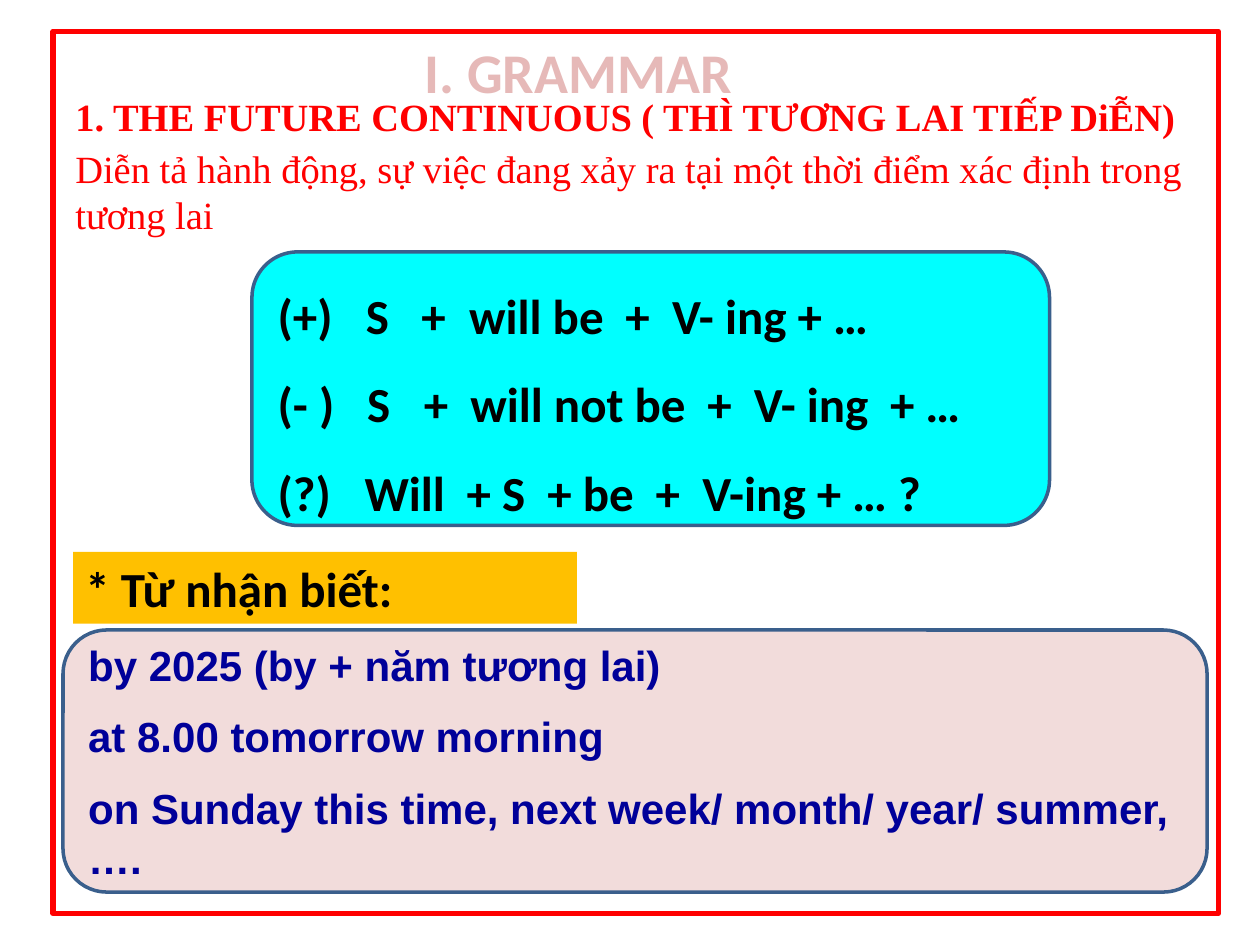
from lxml.etree import SubElement as Sub
from pptx import Presentation as Deck
from pptx.dml.color import RGBColor as Rgb
from pptx.enum.shapes import MSO_SHAPE as Kind
from pptx.enum.text import MSO_ANCHOR as Anchor, MSO_AUTO_SIZE as Fit, PP_ALIGN as Align
from pptx.oxml.ns import qn
from pptx.util import Inches as Inch, Pt

RED = Rgb(0xFF, 0, 0)
ROSE = Rgb(0xE6, 0xB9, 0xB8)
BRICK = Rgb(0xC0, 0x50, 0x4D)
CYAN = Rgb(0, 0xFF, 0xFF)
GOLD = Rgb(0xFF, 0xC0, 0)
PINK = Rgb(0xF2, 0xDC, 0xDB)
STEEL = Rgb(0x3A, 0x5F, 0x8C)
NAVY = Rgb(0, 0, 0x99)
BLACK = Rgb(0, 0, 0)

FORMS = [
    ("(+)\tS\t+\twill be\t+\tV- ing + …", (0.7, 1.14, 1.52, 2.76, 3.13)),
    ("(- )\tS\t+\twill not be\t+\tV- ing\t+ …", (0.71, 1.16, 1.53, 3.41, 3.78, 4.86)),
    ("(?)\tWill\t+ S\t+ be\t+\tV-ing + … ?", (0.69, 1.5, 2.14, 3, 3.37)),
]
SIGNS = [
    "by 2025 (by + năm tương lai)",
    "at 8.00 tomorrow morning",
    "on Sunday this time, next week/ month/ year/ summer, ….",
]


def panel(page, kind, box, fill=None, line=None, width=2):
    """Add a flat shape with an optional fill and outline."""
    shape = page.shapes.add_shape(kind, *map(Inch, box))
    shape.shadow.inherit = False
    if fill is None:
        shape.fill.background()
    else:
        shape.fill.solid()
        shape.fill.fore_color.rgb = fill
    if line is None:
        shape.line.fill.background()
    else:
        shape.line.color.rgb = line
        shape.line.width = Pt(width)
    shape.text_frame.vertical_anchor = Anchor.MIDDLE
    return shape.text_frame


def label(page, box, wrap=True):
    """Add a text box that grows with its text."""
    frame = page.shapes.add_textbox(*map(Inch, box)).text_frame
    frame.word_wrap = wrap
    frame.auto_size = Fit.SHAPE_TO_FIT_TEXT
    return frame


def write(frame, lines, face, size, color, bold=True, align=Align.LEFT):
    """Fill a frame with one run per paragraph."""
    for i, line in enumerate(lines):
        para = frame.add_paragraph() if i else frame.paragraphs[0]
        para.alignment = align
        run = para.add_run()
        run.text = line
        font = run.font
        font.name, font.size, font.bold = face, Pt(size), bold
        font.color.rgb = color
    return frame.paragraphs


def stops(para, marks):
    """Set the tab stops of a paragraph, in inches."""
    tabs = Sub(para._p.get_or_add_pPr(), qn("a:tabLst"))
    for mark in marks:
        Sub(tabs, qn("a:tab"), pos=str(Inch(mark)), algn="l")


def trace(run, color, width):
    """Outline the letters of a run."""
    props = run._r.get_or_add_rPr()
    line = Sub(props, qn("a:ln"), w=str(Pt(width)))
    Sub(Sub(line, qn("a:solidFill")), qn("a:srgbClr"), val=str(color))
    props.insert(0, line)


def heads(page):
    """Add the title, the topic and its meaning."""
    title = write(label(page, (3.26, 0.25, 2.66, 0.64), False), ["I. GRAMMAR"],
                  "Calibri", 32, ROSE, align=Align.CENTER)
    trace(title[0].runs[0], BRICK, 1.75)
    write(label(page, (0.5, 0.69, 9, 0.47)),
          ["1. THE FUTURE CONTINUOUS ( THÌ TƯƠNG LAI TIẾP DiỄN)"],
          "Times New Roman", 22, RED)
    write(label(page, (0.5, 1.1, 9, 0.84)),
          ["Diễn tả hành động, sự việc đang xảy ra tại một thời điểm xác định trong tương lai"],
          "Times New Roman", 22, RED, False)


def forms(page):
    """Add the panel of sentence patterns."""
    frame = panel(page, Kind.ROUNDED_RECTANGLE, (2, 2, 6.33, 2.17), CYAN, STEEL)
    paras = write(frame, [text for text, _ in FORMS], "Calibri", 28, BLACK)
    for para, (_, marks) in zip(paras, FORMS):
        para.line_spacing = 1.5
        stops(para, marks)


def signs(page):
    """Add the signal words and their heading."""
    head = panel(page, Kind.RECTANGLE, (0.58, 4.38, 4, 0.57), GOLD)
    head.vertical_anchor = Anchor.TOP
    write(head, ["* Từ nhận biết:"], "Calibri", 28, BLACK)
    frame = panel(page, Kind.ROUNDED_RECTANGLE, (0.5, 5, 9.08, 2.08), PINK, STEEL)
    for para in write(frame, SIGNS, "Arial", 24, NAVY):
        para.space_before = para.space_after = Pt(6)


def main():
    """Build the grammar slide."""
    deck = Deck()
    deck.slide_width, deck.slide_height = Inch(10), Inch(7.5)
    page = deck.slides.add_slide(deck.slide_layouts[6])
    panel(page, Kind.RECTANGLE, (0.42, 0.25, 9.25, 7), line=RED, width=3)
    heads(page)
    forms(page)
    signs(page)
    deck.save("out.pptx")


if __name__ == "__main__":
    main()
